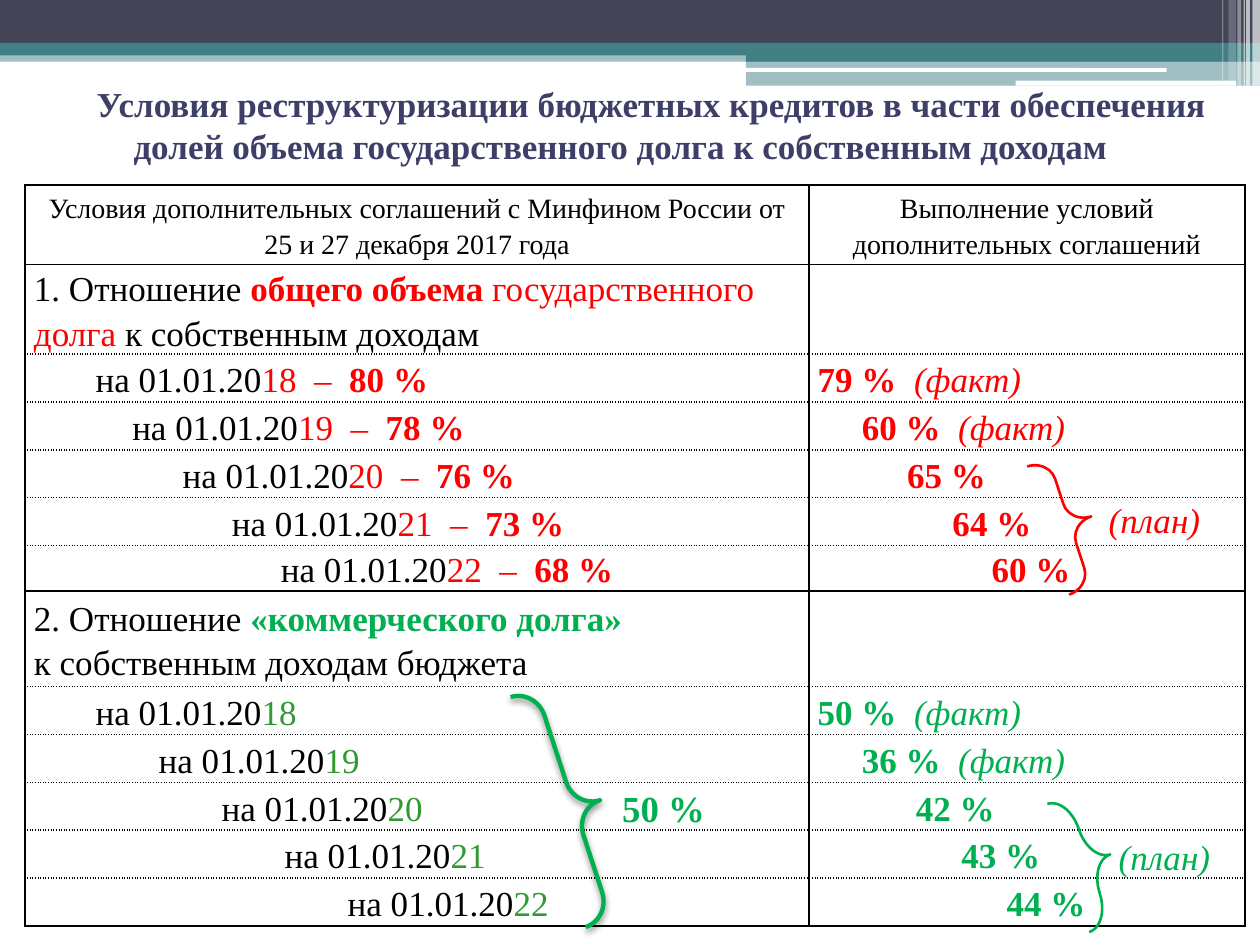
from lxml import etree
from pptx import Presentation, util as u
from pptx.dml import color
from pptx.enum import shapes, text
from pptx.oxml import ns

COLORS = {"black": "000000", "white": "FFFFFF", "navy": "424456", "teal": "438086",
          "title": "3E3F68", "red": "FF0000", "green": "00B050", "year": "339933"}
FONT = "Times New Roman"
PLAIN, BOLD, ITALIC = {}, {"bold": True}, {"italic": True}
CENTER = text.PP_ALIGN.CENTER


def rgb(name):
    return color.RGBColor.from_string(COLORS[name])


def write(paragraph, runs, size=20, indent=0, first=0, **formats):
    for key, value in formats.items():
        setattr(paragraph, key, value)
    properties = paragraph._p.get_or_add_pPr()
    properties.set("marL", str(u.Inches(indent)))
    properties.set("indent", str(u.Inches(first)))
    for words, hue, style in runs:
        run = paragraph.add_run()
        run.text = words
        run.font.color.rgb = rgb(hue)
        for key, value in {"name": FONT, "size": u.Pt(size), "bold": False, **style}.items():
            setattr(run.font, key, value)


prs = Presentation()
prs.slide_width, prs.slide_height = u.Inches(10), u.Inches(7.5)
slide = prs.slides.add_slide(prs.slide_layouts[5])

RECT, ROUND = shapes.MSO_SHAPE.RECTANGLE, shapes.MSO_SHAPE.ROUNDED_RECTANGLE
bands = [
    (RECT, 0, 0.4, 10, 0.09, "teal", 50),
    (RECT, 0, 0, 10, 0.34, "navy", 100),
    (RECT, 0, 0.34, 10, 0.1, "teal", 100),
    (RECT, 5.92, 0.39, 4.08, 0.1, "teal", 100),
    (RECT, 5.92, 0.48, 4.08, 0.2, "teal", 50),
    (ROUND, 5.91, 0.54, 3.35, 0.03, "white", 100),
    (ROUND, 8.06, 0.64, 1.75, 0.04, "white", 100),
    (RECT, 9.94, 0, 0.06, 0.68, "white", 65),
    (RECT, 9.89, 0, 0.03, 0.68, "white", 65),
    (RECT, 9.87, 0, 0.01, 0.68, "white", 60),
    (RECT, 9.82, 0, 0.03, 0.68, "white", 40),
    (RECT, 9.75, 0, 0.06, 0.64, "white", 20),
    (RECT, 9.7, 0, 0.01, 0.64, "white", 30),
]
for kind, left, top, width, height, hue, opacity in bands:
    band = slide.shapes.add_shape(kind, *map(u.Inches, (left, top, width, height)))
    band.shadow.inherit = False
    band.line.fill.background()
    band.fill.solid()
    band.fill.fore_color.rgb = rgb(hue)
    if opacity < 100:
        tint = band._element.spPr.find(".//" + ns.qn("a:srgbClr"))
        etree.SubElement(tint, ns.qn("a:alpha")).set("val", str(opacity * 1000))

heading = slide.shapes.title
for side, value in {"left": 0.12, "top": 0.6, "width": 9.61, "height": 0.77}.items():
    setattr(heading, side, u.Inches(value))
heading.text_frame.word_wrap = True
heading.text_frame.auto_size = text.MSO_AUTO_SIZE.NONE
heading.text_frame.vertical_anchor = text.MSO_ANCHOR.MIDDLE
write(heading.text_frame.paragraphs[0],
      [("Условия реструктуризации бюджетных кредитов в части обеспечения "
        "долей объема государственного долга к собственным доходам", "title", BOLD)],
      first=0.49, alignment=CENTER)

header = [
    "Условия дополнительных соглашений с Минфином России от 25 и 27 декабря 2017 года",
    "Выполнение условий дополнительных соглашений",
]
total_debt = [[("1. Отношение ", "black", PLAIN), ("общего объема", "red", BOLD),
               (" государственного долга", "red", PLAIN),
               (" к собственным доходам", "black", PLAIN)]]
commercial_debt = [[("2. Отношение ", "black", PLAIN), ("«коммерческого долга»", "green", BOLD)],
                   [("к собственным доходам бюджета", "black", PLAIN)]]
years = [18, 19, 20, 21, 22]
limits = [80, 78, 76, 73, 68]
total_shares = [79, 60, 65, 64, 60]
commercial_shares = [50, 36, 42, 43, 44]
total_indents = [0.49, 0.78, 1.18, 1.57, 1.96]
commercial_indents = [0.49 + 0.5 * step for step in range(5)]
total_share_indents = [0, 0.35, 0.71, 1.07, 1.38]
commercial_share_indents = [0, 0.35, 0.78, 1.14, 1.5]

rows = [[([[(words, "black", PLAIN)]], 0) for words in header], [(total_debt, 0), ([], 0)]]
for year, limit, share, indent, share_indent in zip(
        years, limits, total_shares, total_indents, total_share_indents):
    condition = [("на 01.01.20", "black", PLAIN), (f"{year}  –  ", "red", PLAIN),
                 (f"{limit} %", "red", BOLD)]
    result = [(f"{share} %", "red", BOLD)]
    if year < 20:
        result.append(("  (факт)", "red", ITALIC))
    rows.append([([condition], indent), ([result], share_indent)])
rows.append([(commercial_debt, 0), ([], 0)])
for year, share, indent, share_indent in zip(
        years, commercial_shares, commercial_indents, commercial_share_indents):
    condition = [("на 01.01.20", "black", PLAIN), (str(year), "year", PLAIN)]
    result = [(f"{share} %", "green", BOLD)]
    if year < 20:
        result.append(("  (факт)", "green", ITALIC))
    rows.append([([condition], indent), ([result], share_indent)])

heights = [0.63, 0.71] + [0.38] * 4 + [0.36, 0.76] + [0.38] * 5
solid_above = {0, 1, 2 + len(years), len(rows)} 
solid_above = {0, 1, 7, len(rows)}
conditions = slide.shapes.add_table(len(rows), 2, u.Inches(0.2), u.Inches(1.47),
                                    u.Inches(9.68), u.Inches(sum(heights))).table
conditions.first_row = conditions.horz_banding = False
for column, width in zip(conditions.columns, (6.22, 3.46)):
    column.width = u.Inches(width)
for number, (entries, height) in enumerate(zip(rows, heights)):
    conditions.rows[number].height = u.Inches(height)
    for cell, (paragraphs, indent) in zip(conditions.rows[number].cells, entries):
        for key, value in {"margin_left": u.Inches(0.07), "margin_right": u.Inches(0.07),
                           "margin_top": 0, "margin_bottom": 0,
                           "vertical_anchor": text.MSO_ANCHOR.MIDDLE}.items():
            setattr(cell, key, value)
        for order, runs in enumerate(paragraphs):
            frame = cell.text_frame
            paragraph = frame.add_paragraph() if order else frame.paragraphs[0]
            write(paragraph, runs, 20 if number else 16, indent, line_spacing=1.15,
                  alignment=None if number else CENTER)
        borders = {"lnL": True, "lnR": True, "lnT": number in solid_above,
                   "lnB": number + 1 in solid_above}
        for tag, solid in borders.items():
            border = etree.SubElement(cell._tc.get_or_add_tcPr(), ns.qn("a:" + tag))
            border.set("w", str(u.Pt(1)))
            ink = etree.SubElement(border, ns.qn("a:solidFill"))
            etree.SubElement(ink, ns.qn("a:srgbClr")).set("val", COLORS["black"])
            dash = etree.SubElement(border, ns.qn("a:prstDash"))
            dash.set("val", "solid" if solid else "sysDot")
        cell.fill.background()

groups = [
    ((4.34, 5.42, 0.42, 1.92), (0.527, 0.52), "green", 2.5, True,
     "50 %", (4.84, 6.19, 0.87, 0.45), 21, BOLD),
    ((8.31, 3.62, 0.36, 1.07), (0.451, 0.5), "red", 1.5, False,
     "(план)", (8.7, 3.91, 1.18, 0.44), 20, ITALIC),
    ((8.47, 6.3, 0.35, 1.07), (0.842, 0.501), "green", 1.5, False,
     "(план)", (8.78, 6.58, 1.1, 0.44), 20, ITALIC),
]
for place, bends, hue, weight, shaded, words, label_place, size, style in groups:
    brace = slide.shapes.add_shape(shapes.MSO_SHAPE.RIGHT_BRACE, *map(u.Inches, place))
    brace.rotation = 341.9
    for index, bend in enumerate(bends):
        brace.adjustments[index] = bend
    brace.fill.background()
    brace.line.color.rgb = rgb(hue)
    brace.line.width = u.Pt(weight)
    brace.shadow.inherit = False
    if shaded:
        effects = brace._element.spPr.find(ns.qn("a:effectLst"))
        shade = etree.SubElement(effects, ns.qn("a:outerShdw"), blurRad=str(u.Pt(4)),
                                 dist=str(u.Pt(2)), dir="5400000", rotWithShape="0")
        tint = etree.SubElement(shade, ns.qn("a:srgbClr"), val=COLORS["black"])
        etree.SubElement(tint, ns.qn("a:alpha"), val="45000")
    label = slide.shapes.add_textbox(*map(u.Inches, label_place))
    label.text_frame.word_wrap = True
    write(label.text_frame.paragraphs[0], [(words, hue, style)], size)

prs.save("out.pptx")
